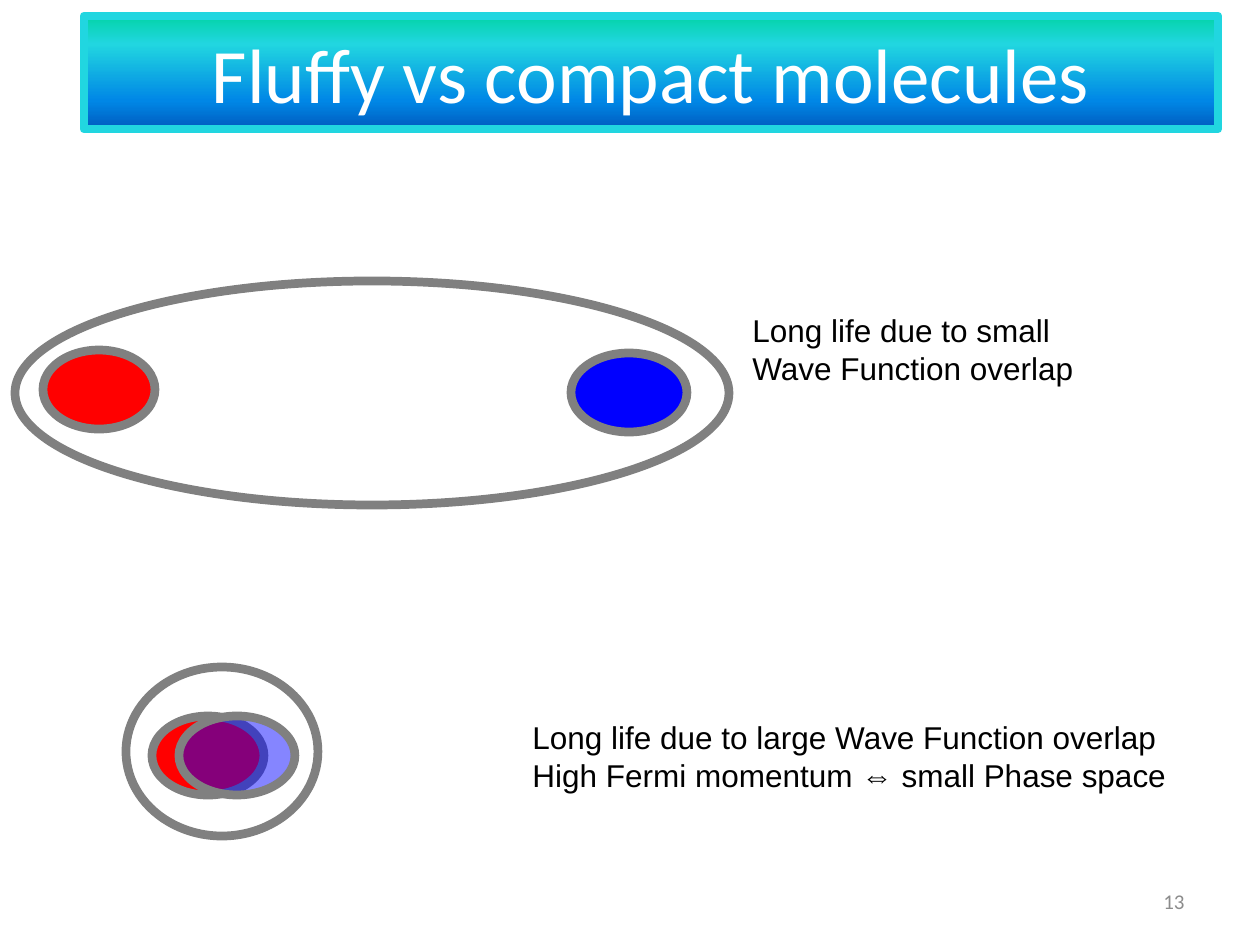
from dataclasses import dataclass
from typing import Optional

import lxml.etree
import pptx
import pptx.dml.color
import pptx.enum.shapes
import pptx.enum.text
import pptx.oxml.ns
import pptx.util

EMU_PER_PX = 914400 / 126
ALIGN = pptx.enum.text.PP_ALIGN
ANCHOR = pptx.enum.text.MSO_ANCHOR
SHAPE = pptx.enum.shapes.MSO_SHAPE


@dataclass(frozen=True)
class Theme:
    heading_font: str = "Calibri"
    body_font: str = "Arial"
    title_size: int = 44
    body_size: int = 18
    body_leading: int = 22
    number_size: int = 12
    outline_width: int = 5
    white: str = "FFFFFF"
    black: str = "000000"
    number: str = "8C8C8C"
    outline: str = "808080"
    red: str = "FF0000"
    blue: str = "0000FF"
    banner_line: str = "21D6E0"
    banner_stops: tuple = ((0, "03D4A8"), (25, "21D6E0"), (75, "0087E6"), (100, "005CBF"))


THEME = Theme()


@dataclass(frozen=True)
class Box:
    left: int
    top: int
    width: int
    height: int

    def emu(self) -> tuple:
        return tuple(px(v) for v in (self.left, self.top, self.width, self.height))


@dataclass(frozen=True)
class Oval:
    box: Box
    fill: Optional[str] = None
    opacity: int = 100


@dataclass(frozen=True)
class Style:
    font: str
    size: int
    color: str
    align: ALIGN = ALIGN.LEFT
    anchor: ANCHOR = ANCHOR.TOP
    leading: Optional[int] = None


@dataclass(frozen=True)
class Caption:
    box: Box
    paragraphs: tuple
    style: Style


TITLE = Style(THEME.heading_font, THEME.title_size, THEME.white, ALIGN.CENTER, ANCHOR.MIDDLE)
BODY = Style(THEME.body_font, THEME.body_size, THEME.black, leading=THEME.body_leading)
NUMBER = Style(THEME.heading_font, THEME.number_size, THEME.number, ALIGN.RIGHT, ANCHOR.MIDDLE)

FLUFFY = (
    Oval(Box(43, 350, 112, 79), THEME.red),
    Oval(Box(571, 353, 116, 79), THEME.blue),
    Oval(Box(15, 281, 714, 224)),
)
COMPACT = (
    Oval(Box(152, 716, 112, 79), THEME.red),
    Oval(Box(179, 716, 116, 79), THEME.blue, opacity=48),
    Oval(Box(126, 667, 192, 169)),
)
CAPTIONS = (
    Caption(Box(903, 876, 294, 50), (("13",),), NUMBER),
    Caption(Box(740, 304, 486, 89), (("Long life due to small ", "Wave Function overlap"),), BODY),
    Caption(
        Box(520, 711, 665, 89),
        (
            ("Long life due to large Wave Function overlap",),
            ("High Fermi momentum ⇔ small Phase space",),
        ),
        BODY,
    ),
)


def px(value: int) -> int:
    return round(value * EMU_PER_PX)


def rgb(color: str) -> pptx.dml.color.RGBColor:
    return pptx.dml.color.RGBColor.from_string(color)


def add_color(parent, color: str):
    return lxml.etree.SubElement(parent, pptx.oxml.ns.qn("a:srgbClr"), val=color)


def write(frame, paragraphs: tuple, style: Style) -> None:
    frame.word_wrap = True
    frame.vertical_anchor = style.anchor
    for index, lines in enumerate(paragraphs):
        paragraph = frame.paragraphs[0] if index == 0 else frame.add_paragraph()
        paragraph.alignment = style.align
        if style.leading:
            paragraph.line_spacing = pptx.util.Pt(style.leading)
        for number, words in enumerate(lines):
            if number:
                paragraph.add_line_break()
            run = paragraph.add_run()
            run.text = words
            run.font.name = style.font
            run.font.size = pptx.util.Pt(style.size)
            run.font.color.rgb = rgb(style.color)


def draw_outlined(slide, preset: SHAPE, box: Box, line: str):
    outlined = slide.shapes.add_shape(preset, *box.emu())
    outlined.shadow.inherit = False
    outlined.line.color.rgb = rgb(line)
    outlined.line.width = pptx.util.Pt(THEME.outline_width)
    return outlined


def draw_banner(slide, box: Box, words: str) -> None:
    banner = draw_outlined(slide, SHAPE.RECTANGLE, box, THEME.banner_line)
    banner.fill.gradient()
    banner.fill.gradient_angle = 270
    stops = banner.element.spPr.find(".//" + pptx.oxml.ns.qn("a:gsLst"))
    for stop in list(stops):
        stops.remove(stop)
    for percent, color in THEME.banner_stops:
        stop = lxml.etree.SubElement(stops, pptx.oxml.ns.qn("a:gs"), pos=str(percent * 1000))
        add_color(stop, color)
    write(banner.text_frame, ((words,),), TITLE)


def draw_oval(slide, oval: Oval) -> None:
    particle = draw_outlined(slide, SHAPE.OVAL, oval.box, THEME.outline)
    if oval.fill is None:
        particle.fill.background()
        return
    particle.fill.solid()
    particle.fill.fore_color.rgb = rgb(oval.fill)
    if oval.opacity < 100:
        color = particle.element.spPr.find(
            pptx.oxml.ns.qn("a:solidFill") + "/" + pptx.oxml.ns.qn("a:srgbClr")
        )
        lxml.etree.SubElement(color, pptx.oxml.ns.qn("a:alpha"), val=str(oval.opacity * 1000))


def draw_caption(slide, caption: Caption) -> None:
    frame = slide.shapes.add_textbox(*caption.box.emu()).text_frame
    write(frame, caption.paragraphs, caption.style)


def main() -> None:
    deck = pptx.Presentation()
    deck.slide_width, deck.slide_height = px(1260), px(945)
    slide = deck.slides.add_slide(deck.slide_layouts[6])
    draw_banner(slide, Box(84, 16, 1134, 113), "Fluffy vs compact molecules")
    for oval in FLUFFY + COMPACT:
        draw_oval(slide, oval)
    for caption in CAPTIONS:
        draw_caption(slide, caption)
    deck.save("out.pptx")


if __name__ == "__main__":
    main()
